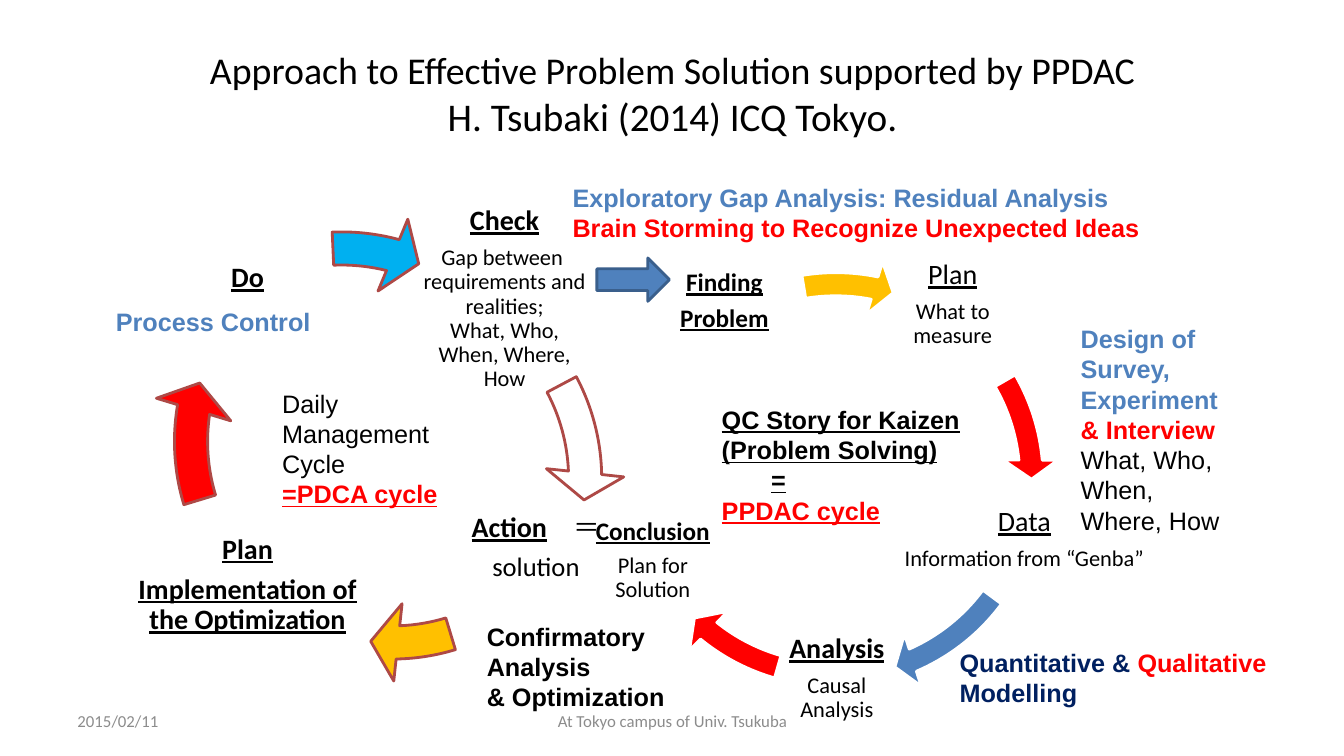
import pptx
import pptx.util
import pptx.dml.color
import pptx.enum.shapes
import pptx.enum.text
import lxml.etree

Inches = pptx.util.Inches
Pt = pptx.util.Pt
SHAPE = pptx.enum.shapes.MSO_SHAPE
ALIGN = pptx.enum.text.PP_ALIGN
ANCHOR = pptx.enum.text.MSO_ANCHOR

BLACK, RED, BLUE, NAVY = "000000", "FF0000", "4F81BD", "002060"
GOLD, SKY, WHITE, MAROON, GRAY = "FFC000", "00B0F0", "FFFFFF", "AE4946", "8C8C8C"


def color(code):
    return pptx.dml.color.RGBColor.from_string(code)


def write(frame, paras, face, align):
    for i, runs in enumerate(paras):
        para = frame.add_paragraph() if i else frame.paragraphs[0]
        para.alignment = align
        for text, size, code, style in runs:
            for j, part in enumerate(text.split("\n")):
                if j:
                    para.add_line_break()
                if not part:
                    continue
                run = para.add_run()
                run.text = part
                run.font.name = face
                run.font.size = Pt(size)
                run.font.color.rgb = color(code)
                run.font.bold = "b" in style
                run.font.underline = "u" in style


deck = pptx.Presentation()
deck.slide_width = Inches(13.33)
deck.slide_height = Inches(7.5)
slide = deck.slides.add_slide(deck.slide_layouts[5])
shapes = slide.shapes

title = shapes.title
title.left, title.top = Inches(0.67), Inches(0.3)
title.width, title.height = Inches(12), Inches(1.25)
title.text_frame.vertical_anchor = ANCHOR.MIDDLE
write(title.text_frame, [[
    ("Approach to Effective Problem Solution supported by PPDAC\n", 27, BLACK, ""),
    ("H. Tsubaki (2014) ICQ Tokyo.", 28, BLACK, ""),
]], "Calibri", ALIGN.CENTER)

nodes = [
    (8.86, 2.43, 1.18, 1.18, [[("Plan", 20, BLACK, "u")],
                              [("What to measure", 16, BLACK, "")]]),
    (8.93, 4.76, 2.46, 1.18, [[("Data", 20, BLACK, "u")],
                              [("Information from “Genba”", 16, BLACK, "")]]),
    (7.71, 6.14, 1.18, 1.18, [[("Analysis", 20, BLACK, "bu")],
                              [("Causal Analysis", 16, BLACK, "")]]),
    (5.75, 4.97, 1.45, 1.18, [[("Conclusion", 18, BLACK, "bu")],
                              [("Plan for Solution", 16, BLACK, "")]]),
    (6.4, 2.4, 1.57, 1.18, [[("Finding", 18, BLACK, "bu")],
                            [("Problem", 18, BLACK, "bu")]]),
    (4.16, 2.12, 1.69, 1.69, [[("Check", 20, BLACK, "bu")],
                              [("Gap between \nrequirements and realities;\n"
                                "What, Who, When, Where, How", 16, BLACK, "")]]),
    (4.47, 4.59, 1.69, 1.69, [[("Action", 20, BLACK, "bu"), ("　＝", 19, BLACK, "")],
                              [("solution", 19, BLACK, "")]]),
    (1.24, 4.96, 2.43, 1.69, [[("Plan", 20, BLACK, "bu")],
                              [("Implementation of the Optimization", 20, BLACK, "bu")]]),
    (1.61, 1.92, 1.69, 1.69, [[("Do", 20, BLACK, "bu")]]),
]
for x, y, w, h, paras in nodes:
    frame = shapes.add_textbox(Inches(x), Inches(y), Inches(w), Inches(h)).text_frame
    frame.word_wrap = True
    frame.vertical_anchor = ANCHOR.MIDDLE
    frame.margin_left = frame.margin_right = Inches(0.03)
    frame.margin_top = frame.margin_bottom = Inches(0.03)
    write(frame, paras, "Calibri", ALIGN.CENTER)
    for para, runs in zip(frame.paragraphs, paras):
        para.line_spacing = 0.9
        para.space_after = Pt(round(runs[0][1] * 0.35))

small = (4.42, 0.052, 3.36, 0.061, WHITE)
large = (4.76, 0.069, 4.656, 0.081, MAROON)
arcs = [
    (small, 6.08, 2.54, 212.71, 197.94, RED),
    (small, 6.07, 2.56, 39.91, 21.88, BLUE),
    (small, 6.04, 2.54, 77.41, 63.63, RED),
    (small, 6.08, 2.55, 168.86, 156.35, GOLD),
    (large, 1.43, 2.37, 214.98, 199.22, WHITE),
    (large, 1.51, 2, 53.01, 43.86, GOLD),
    (large, 1.51, 2, 113.48, 97.86, RED),
    (large, 1.01, 2.08, 170.85, 160.5, SKY),
]
arrows = []
for (side, thick, head, flare, edge), x, y, end, start, fill in arcs:
    arc = shapes.add_shape(SHAPE.CIRCULAR_ARROW, Inches(x), Inches(y),
                           Inches(side), Inches(side))
    for i, value in enumerate((thick, head, end, start, flare)):
        arc.adjustments[i] = value
    arrows.append((arc, fill, edge))
link = shapes.add_shape(SHAPE.RIGHT_ARROW, Inches(5.92), Inches(2.56),
                        Inches(0.72), Inches(0.43))
arrows.append((link, BLUE, "3A5F8C"))
for arrow, fill, edge in arrows:
    arrow.shadow.inherit = False
    arrow.fill.solid()
    arrow.fill.fore_color.rgb = color(fill)
    arrow.line.color.rgb = color(edge)
    arrow.line.width = Pt(2)

notes = [
    (7.06, 3.96, 2.88, 1.62, ALIGN.LEFT, [
        [("QC Story for Kaizen (Problem Solving)", 18, BLACK, "bu")],
        [("\t=", 18, BLACK, "bu")],
        [("PPDAC cycle", 18, RED, "bu")]]),
    (2.7, 3.8, 1.88, 1.31, ALIGN.LEFT, [
        [("Daily Management Cycle", 18, BLACK, "")],
        [("=PDCA cycle", 18, RED, "bu")]]),
    (10.62, 3.16, 1.7, 2.52, ALIGN.LEFT, [
        [("Design of Survey,", 18, BLUE, "b")],
        [("Experiment", 18, BLUE, "b")],
        [("& Interview", 18, RED, "b")],
        [("What, Who, When, Where, How", 18, BLACK, "")]]),
    (9.42, 6.37, 3.24, 0.71, ALIGN.LEFT, [
        [("Quantitative & ", 18, NAVY, "b"), ("Qualitative", 18, RED, "b"),
         (" Modelling", 18, NAVY, "b")]]),
    (4.73, 6.11, 2.1, 1.01, ALIGN.LEFT, [
        [("Confirmatory Analysis", 18, BLACK, "b")],
        [("& Optimization", 18, BLACK, "b")]]),
    (5.58, 1.76, 5.89, 0.71, ALIGN.LEFT, [
        [("Exploratory Gap Analysis: Residual Analysis", 18, BLUE, "b")],
        [("Brain Storming to Recognize Unexpected Ideas", 18, RED, "b")]]),
    (0.7, 2.99, 2.83, 0.4, ALIGN.CENTER, [[("Process Control", 18, BLUE, "b")]]),
]
for x, y, w, h, align, paras in notes:
    frame = shapes.add_textbox(Inches(x), Inches(y), Inches(w), Inches(h)).text_frame
    frame.word_wrap = True
    write(frame, paras, "Arial", align)
    for para in frame.paragraphs:
        if para.text.startswith("\t"):
            props = para._p.get_or_add_pPr()
            tabs = lxml.etree.SubElement(props, pptx.oxml.ns.qn("a:tabLst"))
            lxml.etree.SubElement(tabs, pptx.oxml.ns.qn("a:tab"),
                                  pos=str(Inches(0.49)), algn="l")

foots = [
    (0.67, 3.11, ALIGN.LEFT, "2015/02/11"),
    (4.56, 4.22, ALIGN.CENTER, "At Tokyo campus of Univ. Tsukuba"),
]
for x, w, align, text in foots:
    frame = shapes.add_textbox(Inches(x), Inches(6.95), Inches(w), Inches(0.4)).text_frame
    frame.word_wrap = True
    frame.vertical_anchor = ANCHOR.MIDDLE
    write(frame, [[(text, 12, GRAY, "")]], "Calibri", align)

deck.save("out.pptx")
